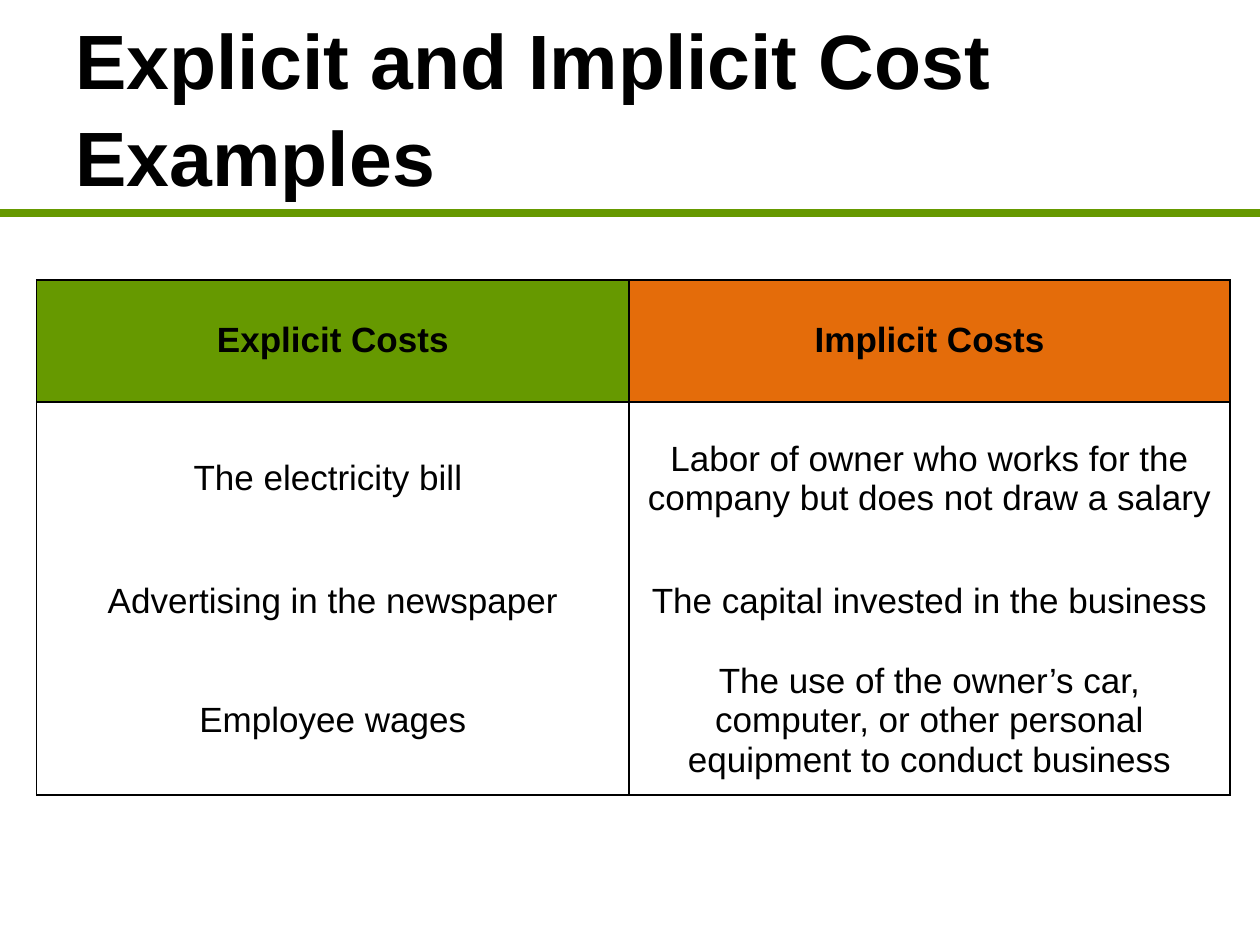
"""Build a slide that compares explicit and implicit cost examples in a table."""
from typing import NamedTuple

from lxml.etree import SubElement
from pptx import Presentation
from pptx.dml.color import RGBColor
from pptx.enum.shapes import MSO_CONNECTOR as Connector
from pptx.enum.text import MSO_ANCHOR as Anchor, MSO_AUTO_SIZE as AutoSize, PP_ALIGN as Align
from pptx.oxml.ns import qn
from pptx.util import Cm, Pt

BLACK = RGBColor(0x00, 0x00, 0x00)
GREEN = RGBColor(0x66, 0x99, 0x00)
ORANGE = RGBColor(0xE4, 0x6C, 0x0A)
FONT = "Arial"


class CostColumn(NamedTuple):
    heading: str
    color: RGBColor
    width: float
    examples: tuple[str, ...]


COLUMNS = (
    CostColumn("Explicit Costs", GREEN, 11.94, (
        "The electricity bill ",
        "Advertising in the newspaper",
        "Employee wages",
    )),
    CostColumn("Implicit Costs", ORANGE, 12.12, (
        "Labor of owner who works for the company but does not draw a salary",
        "The capital invested in the business",
        "The use of the owner’s car, computer, or other personal equipment to conduct business",
    )),
)
ROW_HEIGHTS = (2.46, 3.1, 1.83, 3.0)


def add_span(para, text: str, size: int, bold: bool) -> None:
    span = para.add_run()
    span.text = text
    span.font.name = FONT
    span.font.size = Pt(size)
    span.font.bold = bold
    span.font.color.rgb = BLACK


def add_title(page, text: str) -> None:
    title = page.shapes.title
    title.left, title.top, title.width, title.height = Cm(1.27), Cm(0), Cm(22.86), Cm(4.24)
    frame = title.text_frame
    frame.word_wrap = True
    frame.auto_size = AutoSize.NONE
    frame.vertical_anchor = Anchor.MIDDLE
    para = frame.paragraphs[0]
    para.alignment = Align.LEFT
    para.line_spacing = 1.05
    add_span(para, text, 44, True)


def add_rule(page, top: float) -> None:
    rule = page.shapes.add_connector(Connector.STRAIGHT, Cm(0), Cm(top), Cm(25.4), Cm(top))
    rule.line.color.rgb = GREEN
    rule.line.width = Pt(4.5)
    SubElement(rule._element.spPr, qn("a:effectLst"))


def add_borders(cell, sides: str) -> None:
    properties = cell._tc.get_or_add_tcPr()
    for side in "LRTB":
        line = SubElement(properties, qn(f"a:ln{side}"), w=str(Pt(1)))
        if side in sides:
            fill = SubElement(line, qn("a:solidFill"))
            SubElement(fill, qn("a:srgbClr"), val=str(BLACK))
        else:
            SubElement(line, qn("a:noFill"))


def fill_cell(cell, text: str, sides: str, color: RGBColor | None) -> None:
    add_borders(cell, sides)
    if color is None:
        cell.fill.background()
    else:
        cell.fill.solid()
        cell.fill.fore_color.rgb = color
    cell.vertical_anchor = Anchor.MIDDLE
    cell.margin_left = cell.margin_right = Cm(0.18)
    cell.margin_top = cell.margin_bottom = Cm(0)
    para = cell.text_frame.paragraphs[0]
    para.alignment = Align.CENTER
    add_span(para, text, 20, color is not None)


def add_cost_table(page) -> None:
    width = sum(column.width for column in COLUMNS)
    table = page.shapes.add_table(
        len(ROW_HEIGHTS), len(COLUMNS), Cm(0.74), Cm(5.64), Cm(width), Cm(sum(ROW_HEIGHTS))
    ).table
    table.horz_banding = False
    for row, height in zip(table.rows, ROW_HEIGHTS):
        row.height = Cm(height)
    last = len(ROW_HEIGHTS) - 1
    for index, column in enumerate(COLUMNS):
        table.columns[index].width = Cm(column.width)
        fill_cell(table.cell(0, index), column.heading, "LRTB", column.color)
        for row, example in enumerate(column.examples, start=1):
            sides = "LR" + ("T" if row == 1 else "") + ("B" if row == last else "")
            fill_cell(table.cell(row, index), example, sides, None)


def main() -> None:
    deck = Presentation()
    deck.slide_width, deck.slide_height = Cm(25.4), Cm(19.05)
    page = deck.slides.add_slide(deck.slide_layouts[5])
    add_rule(page, 4.29)
    add_title(page, "Explicit and Implicit Cost Examples")
    add_cost_table(page)
    deck.save("out.pptx")


if __name__ == "__main__":
    main()
